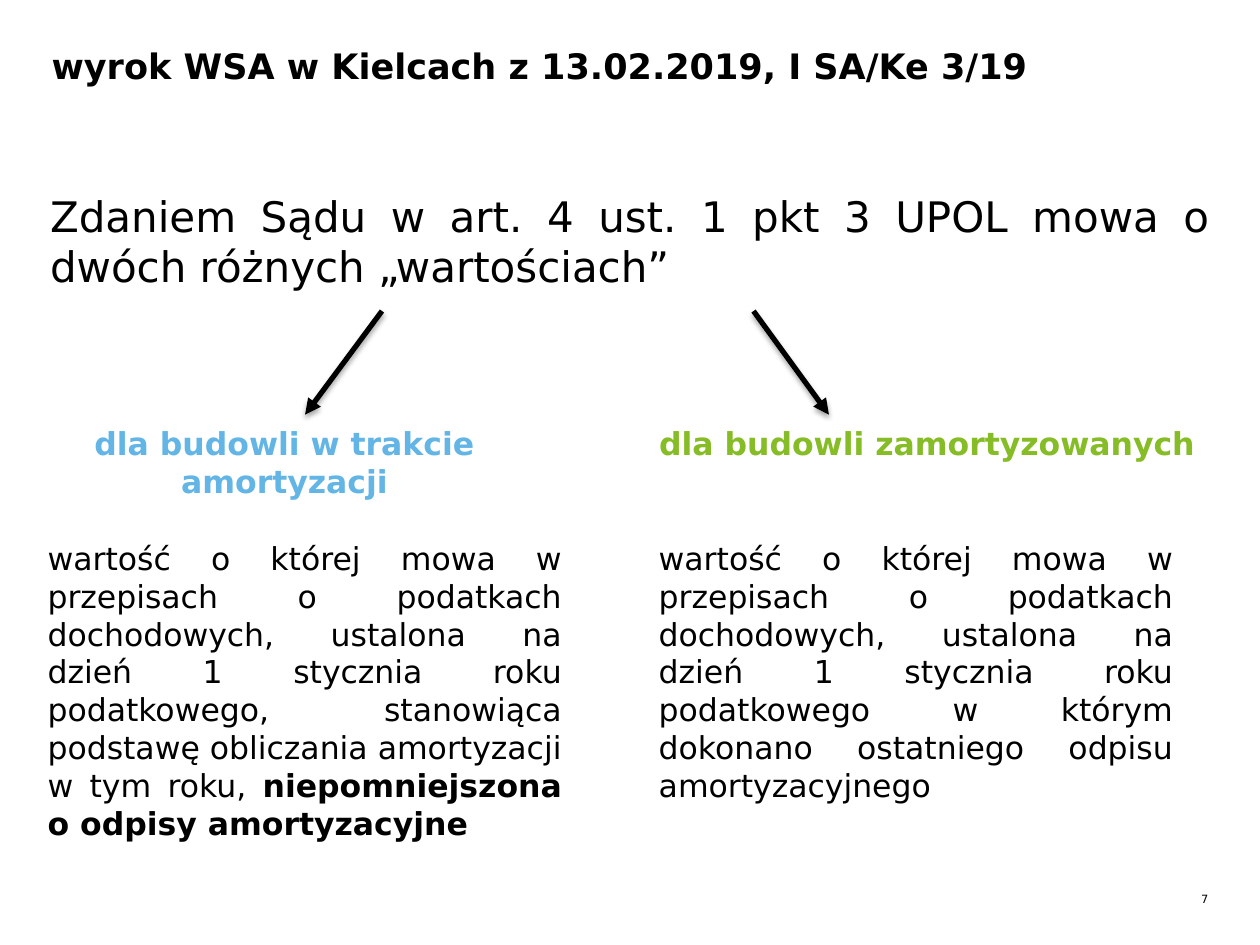
import pptx
import pptx.dml.color
import pptx.enum.shapes
import pptx.enum.text
import pptx.oxml
import pptx.oxml.ns
import pptx.util
from pptx.util import Cm

FONT = "DejaVu Sans"
BLACK, BLUE, GREEN = "000000", "62B5E5", "86BC25"
ALIGN = pptx.enum.text.PP_ALIGN

TITLE = "wyrok WSA w Kielcach z 13.02.2019, I SA/Ke 3/19"
THESIS = "Zdaniem Sądu w art. 4 ust. 1 pkt 3 UPOL mowa o dwóch różnych „wartościach”"
PAGE_NUMBER = "7"

# Boxes are (left, top, width, height) in cm; arrows give the x of start and end.
BRANCHES = [
    {
        "arrow": (7.7, 6.15),
        "heading": "dla budowli w trakcie amortyzacji",
        "heading_box": (0.3, 8.43, 10.87, 2.57),
        "color": BLUE,
        "body": "wartość o której mowa w przepisach o podatkach dochodowych, "
                "ustalona na dzień 1 stycznia roku podatkowego, stanowiąca "
                "podstawę obliczania amortyzacji w tym roku, ",
        "emphasis": "niepomniejszona o odpisy amortyzacyjne",
        "body_box": (0.71, 10.74, 10.87, 6.4),
    },
    {
        "arrow": (15.19, 16.71),
        "heading": "dla budowli zamortyzowanych",
        "heading_box": (12.34, 8.43, 12.7, 1.02),
        "color": GREEN,
        "body": "wartość o której mowa w przepisach o podatkach dochodowych, "
                "ustalona na dzień 1 stycznia roku podatkowego w którym "
                "dokonano ostatniego odpisu amortyzacyjnego",
        "emphasis": "",
        "body_box": (13.03, 10.74, 10.87, 5.64),
    },
]
ARROW_TOP, ARROW_BOTTOM = 6.27, 8.36

SHADOW = (
    f'<a:effectLst {pptx.oxml.ns.nsdecls("a")}>'
    '<a:outerShdw blurRad="39370" dist="22860" dir="5400000" rotWithShape="0">'
    '<a:srgbClr val="000000"><a:alpha val="35000"/></a:srgbClr>'
    '</a:outerShdw></a:effectLst>'
)
ARROWHEAD = f'<a:tailEnd {pptx.oxml.ns.nsdecls("a")} type="triangle"/>'


def rgb(value):
    return pptx.dml.color.RGBColor.from_string(value)


def add_text(slide, text, box, size, color=BLACK, bold=False, emphasis="",
             align=ALIGN.LEFT, padded=True):
    """Add a wrapped text box; emphasis is a bold ending after the text."""
    frame = slide.shapes.add_textbox(*map(Cm, box)).text_frame
    frame.word_wrap = True
    if not padded:
        frame.margin_left = frame.margin_right = 0
        frame.margin_top = frame.margin_bottom = 0
    paragraph = frame.paragraphs[0]
    paragraph.alignment = align
    for words, is_bold in ((text, bold), (emphasis, True)):
        if words:
            run = paragraph.add_run()
            run.text = words
            run.font.name = FONT
            run.font.size = pptx.util.Pt(size)
            run.font.bold = is_bold
            run.font.color.rgb = rgb(color)


def add_arrow(slide, start_x, end_x):
    arrow = slide.shapes.add_connector(
        pptx.enum.shapes.MSO_CONNECTOR.STRAIGHT,
        Cm(start_x), Cm(ARROW_TOP), Cm(end_x), Cm(ARROW_BOTTOM))
    arrow.line.color.rgb = rgb(BLACK)
    arrow.line.width = pptx.util.Pt(3)
    arrow.line._get_or_add_ln().append(pptx.oxml.parse_xml(ARROWHEAD))
    arrow._element.spPr.append(pptx.oxml.parse_xml(SHADOW))


def main():
    presentation = pptx.Presentation()
    presentation.slide_width, presentation.slide_height = Cm(25.4), Cm(19.05)
    slide = presentation.slides.add_slide(presentation.slide_layouts[6])

    add_text(slide, PAGE_NUMBER, (23.72, 17.98, 0.64, 0.28), 6.5,
             align=ALIGN.RIGHT, padded=False)
    add_text(slide, TITLE, (1.04, 0.89, 23.32, 0.94), 20, bold=True, padded=False)
    add_text(slide, THESIS, (0.76, 3.71, 23.88, 3.84), 24, align=ALIGN.JUSTIFY)
    for branch in BRANCHES:
        add_arrow(slide, *branch["arrow"])
        add_text(slide, branch["heading"], branch["heading_box"], 18,
                 color=branch["color"], bold=True, align=ALIGN.CENTER)
        add_text(slide, branch["body"], branch["body_box"], 18,
                 emphasis=branch["emphasis"], align=ALIGN.JUSTIFY)

    presentation.save("out.pptx")


if __name__ == "__main__":
    main()
